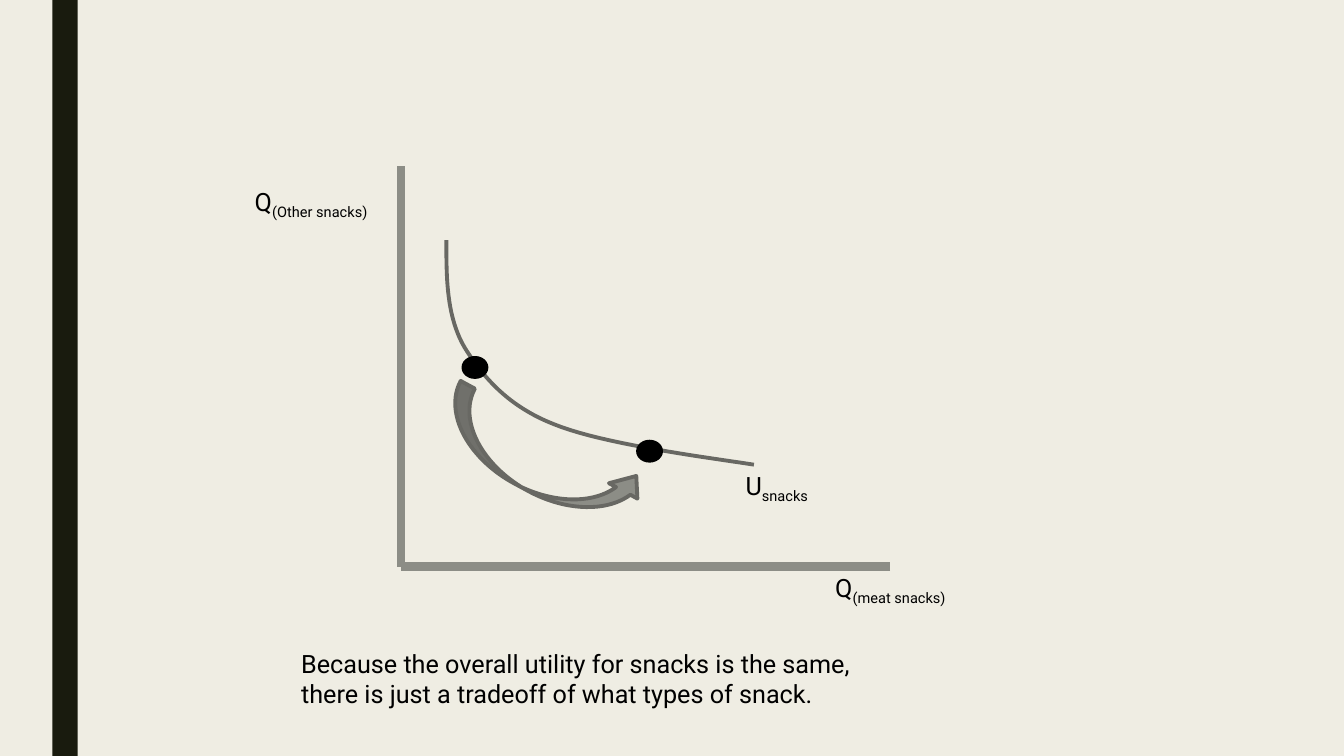
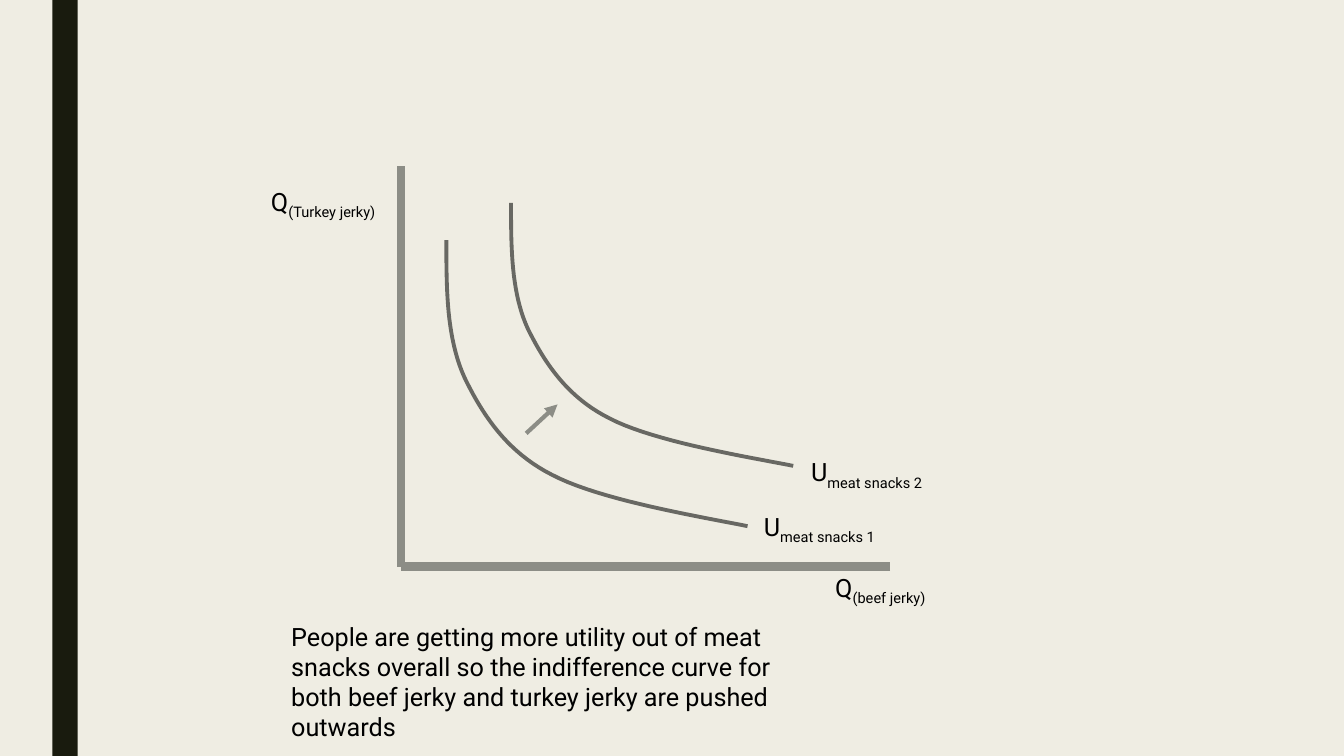
import pptx
import pptx.dml.color
import pptx.enum.shapes
import pptx.enum.text
import pptx.oxml.xmlchemy
import pptx.util
from pptx.util import Cm

# Shared look
PAPER, BAND, AXIS, CURVE, INK = "EFEDE3", "191B0E", "8C8D86", "686863", "000000"
FONT, TEXT_SIZE = "Roboto", 18
CURVE_WIDTH, AXIS_WIDTH = 2.75, 6
SHAPE = pptx.enum.shapes.MSO_SHAPE

# Axes, in cm
ORIGIN_X, ORIGIN_Y = 10.11, 14.28
AXIS_TOP, AXIS_RIGHT = 4.19, 22.43

# Indifference curve as Bezier segments in a unit box
CURVE_START = (0, 0)
CURVE_SEGMENTS = [
    [(0, 0.17), (0, 0.34), (0.06, 0.48)],
    [(0.12, 0.61), (0.2, 0.74), (0.35, 0.82)],
    [(0.51, 0.91), (0.86, 0.97), (1, 1)],
]
STEPS = 20


def rgb(value):
    return pptx.dml.color.RGBColor.from_string(value)


def add_xml(parent, tag, **attributes):
    element = pptx.oxml.xmlchemy.OxmlElement(tag)
    for name, value in attributes.items():
        element.set(name, value)
    parent.append(element)


def set_line(shape, color, width):
    shape.line.color.rgb = rgb(color)
    shape.line.width = pptx.util.Pt(width)


def add_filled(s, kind, x, y, w, h, fill, line=None):
    sp = s.shapes.add_shape(kind, Cm(x), Cm(y), Cm(w), Cm(h))
    sp.shadow.inherit = False
    sp.fill.solid()
    sp.fill.fore_color.rgb = rgb(fill)
    if line:
        set_line(sp, line, CURVE_WIDTH)
    else:
        sp.line.fill.background()
    return sp


def add_line(s, x1, y1, x2, y2, width, arrow=False):
    cn = s.shapes.add_connector(pptx.enum.shapes.MSO_CONNECTOR.STRAIGHT,
                                Cm(x1), Cm(y1), Cm(x2), Cm(y2))
    set_line(cn, AXIS, width)
    if arrow:
        add_xml(cn.element.spPr.get_or_add_ln(), "a:tailEnd", type="triangle")
    add_xml(cn.element.spPr, "a:effectLst")


def add_text(s, x, y, w, h, text, subscript=""):
    tb = s.shapes.add_textbox(Cm(x), Cm(y), Cm(w), Cm(h))
    tf = tb.text_frame
    tf.word_wrap = True
    tf.auto_size = pptx.enum.text.MSO_AUTO_SIZE.SHAPE_TO_FIT_TEXT
    p = tf.paragraphs[0]
    p.font.name = FONT
    p.font.size = pptx.util.Pt(TEXT_SIZE)
    p.font.color.rgb = rgb(INK)
    p.add_run().text = text
    if subscript:
        r = p.add_run()
        r.text = subscript
        r._r.get_or_add_rPr().set("baseline", "-25000")


def add_label(s, x, y, letter, subscript):
    add_text(s, x, y, 4, 1.02, letter, subscript)


def curve_points():
    """Sample the unit curve along its Bezier segments."""
    points, start = [CURVE_START], CURVE_START
    for a, b, end in CURVE_SEGMENTS:
        for i in range(1, STEPS + 1):
            t = i / STEPS
            u = 1 - t
            points.append(tuple(
                u**3 * start[k] + 3 * u * u * t * a[k] + 3 * u * t * t * b[k] + t**3 * end[k]
                for k in (0, 1)))
        start = end
    return points


def add_curve(s, x, y, w, h):
    points = [(Cm(x + w * px), Cm(y + h * py)) for px, py in curve_points()]
    fb = s.shapes.build_freeform(*points[0])
    fb.add_line_segments(points[1:], close=False)
    sp = fb.convert_to_shape()
    sp.shadow.inherit = False
    sp.fill.background()
    set_line(sp, CURVE, CURVE_WIDTH)


def add_dot(s, x, y):
    add_filled(s, SHAPE.OVAL, x, y, 0.58, 0.48, INK, INK)


def style_master(prs, s):
    """Give the master its background and side band, drawn on s and moved."""
    master = prs.slide_master
    master.background.fill.solid()
    master.background.fill.fore_color.rgb = rgb(PAPER)
    band = add_filled(s, SHAPE.RECTANGLE, 1.32, 0, 0.64, 19.05, BAND)
    band.element.nvSpPr.cNvPr.set("id", "99")
    master.element.cSld.spTree.insert(2, band.element)


def add_axes(s, y_name, y_name_left, x_name):
    add_line(s, ORIGIN_X, AXIS_TOP, ORIGIN_X, ORIGIN_Y, AXIS_WIDTH)
    add_line(s, AXIS_RIGHT, ORIGIN_Y, ORIGIN_X, ORIGIN_Y, AXIS_WIDTH)
    add_label(s, 20.8, 14.3, "Q", x_name)
    add_label(s, y_name_left, 4.57, "Q", y_name)


def build_tradeoff(s):
    add_axes(s, "(Other snacks)", 6.17, "(meat snacks)")
    add_curve(s, 11.25, 6.05, 7.75, 5.66)
    add_label(s, 18.54, 11.73, "U", "snacks")

    # Move along the curve
    move = add_filled(s, SHAPE.CURVED_RIGHT_ARROW, 12.8, 8.89, 1.63, 5.44, AXIS, CURVE)
    for i, value in enumerate((0.25, 0.5, 0.3)):
        move.adjustments[i] = value
    move.rotation = 298.4
    add_dot(s, 11.68, 9.02)
    add_dot(s, 16.08, 11.13)

    add_text(s, 7.34, 16.2, 15.09, 1.8,
             "Because the overall utility for snacks is the same, "
             "there is just a tradeoff of what types of snack.")


def build_shift(s):
    add_axes(s, "(Turkey jerky)", 6.58, "(beef jerky)")
    add_curve(s, 11.25, 6.05, 7.59, 7.21)
    add_curve(s, 12.88, 5.11, 7.11, 6.63)
    add_label(s, 20.19, 11.38, "U", "meat snacks 2")
    add_label(s, 19, 12.75, "U", "meat snacks 1")

    # Outward shift
    add_line(s, 13.26, 10.92, 14.05, 10.19, 3, arrow=True)

    add_text(s, 7.09, 15.52, 13.41, 2.57,
             "People are getting more utility out of meat snacks overall so the "
             "indifference curve for both beef jerky and turkey jerky are pushed outwards")


def main():
    prs = pptx.Presentation()
    prs.slide_width, prs.slide_height = Cm(33.87), Cm(19.05)
    blank = prs.slide_layouts[6]
    slides = [prs.slides.add_slide(blank) for _ in range(2)]
    style_master(prs, slides[0])
    build_tradeoff(slides[0])
    build_shift(slides[1])
    prs.save("out.pptx")


if __name__ == "__main__":
    main()
